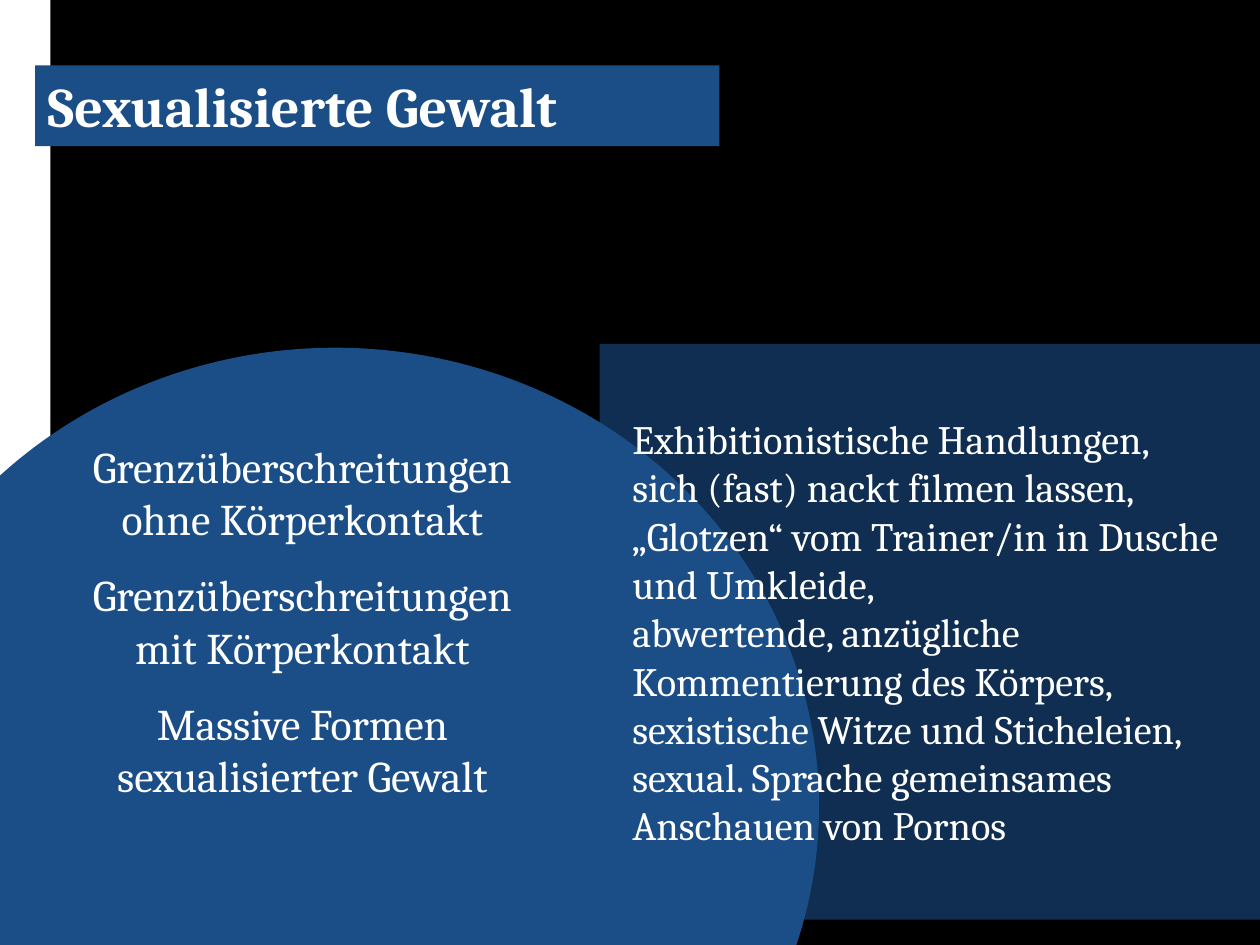
from lxml.etree import SubElement
from pptx import Presentation
from pptx.dml.color import RGBColor
from pptx.enum.shapes import MSO_SHAPE
from pptx.enum.text import MSO_ANCHOR, MSO_AUTO_SIZE, PP_ALIGN
from pptx.oxml.ns import qn
from pptx.util import Inches, Pt

COLORS = {"black": "000000", "white": "FFFFFF", "blue": "1B4E87"}

prs = Presentation()
prs.slide_width, prs.slide_height = Inches(10), Inches(7.5)
col, row = prs.slide_width / 100, prs.slide_height / 75
s = prs.slides.add_slide(prs.slide_layouts[6])
s.background.fill.solid()
s.background.fill.fore_color.rgb = RGBColor.from_string(COLORS["black"])


def add_block(kind, box, color):
    x, y, w, h = box
    sp = s.shapes.add_shape(kind, round(x * col), round(y * row), round(w * col), round(h * row))
    sp.shadow.inherit = False
    sp.fill.solid()
    sp.fill.fore_color.rgb = RGBColor.from_string(COLORS[color])
    sp.line.fill.background()
    return sp


def write(sp, lines, size, align=PP_ALIGN.LEFT, bold=False):
    tf = sp.text_frame
    frame = {"word_wrap": True, "auto_size": MSO_AUTO_SIZE.SHAPE_TO_FIT_TEXT,
             "vertical_anchor": MSO_ANCHOR.TOP}
    for name, value in frame.items():
        setattr(tf, name, value)
    for i, line in enumerate(lines):
        p = tf.paragraphs[0] if i == 0 else tf.add_paragraph()
        p.alignment = align
        r = p.add_run()
        r.text = line
        for name, value in {"name": "Cambria", "size": Pt(size), "bold": bold}.items():
            setattr(r.font, name, value)
        r.font.color.rgb = RGBColor.from_string(COLORS["white"])


add_block(MSO_SHAPE.RECTANGLE, (0, 0, 4, 75), "white")
add_block(MSO_SHAPE.OVAL, (-11.8, 27.6, 76.8, 72.8), "blue")

panel = add_block(MSO_SHAPE.RECTANGLE, (47.6, 27.3, 80.3, 45.7), "blue")
color = panel.fill._xPr.find(qn("a:solidFill"))[0]
SubElement(color, qn("a:alpha")).set("val", "60000")

examples = [
    "Exhibitionistische Handlungen,",
    "sich (fast) nackt filmen lassen,",
    "„Glotzen“ vom Trainer/in in Dusche und Umkleide,",
    "abwertende, anzügliche Kommentierung des Körpers,",
    "sexistische Witze und Sticheleien, sexual. Sprache gemeinsames Anschauen von Pornos",
]
sp = s.shapes.add_textbox(round(49.2 * col), round(32.4 * row), round(50.8 * col), round(35.8 * row))
write(sp, examples, 23)

forms = [
    "Grenzüberschreitungen ohne Körperkontakt",
    "Grenzüberschreitungen mit Körperkontakt",
    "Massive Formen sexualisierter Gewalt",
]
for i, form in enumerate(forms):
    top = 34.4 + i * 10.2
    sp = s.shapes.add_textbox(round(4.3 * col), round(top * row), round(39.4 * col), round(9.4 * row))
    write(sp, [form], 25, PP_ALIGN.CENTER)

title = add_block(MSO_SHAPE.RECTANGLE, (2.8, 5.2, 54.3, 6.4), "blue")
write(title, ["Sexualisierte Gewalt"], 32, bold=True)

prs.save("out.pptx")
